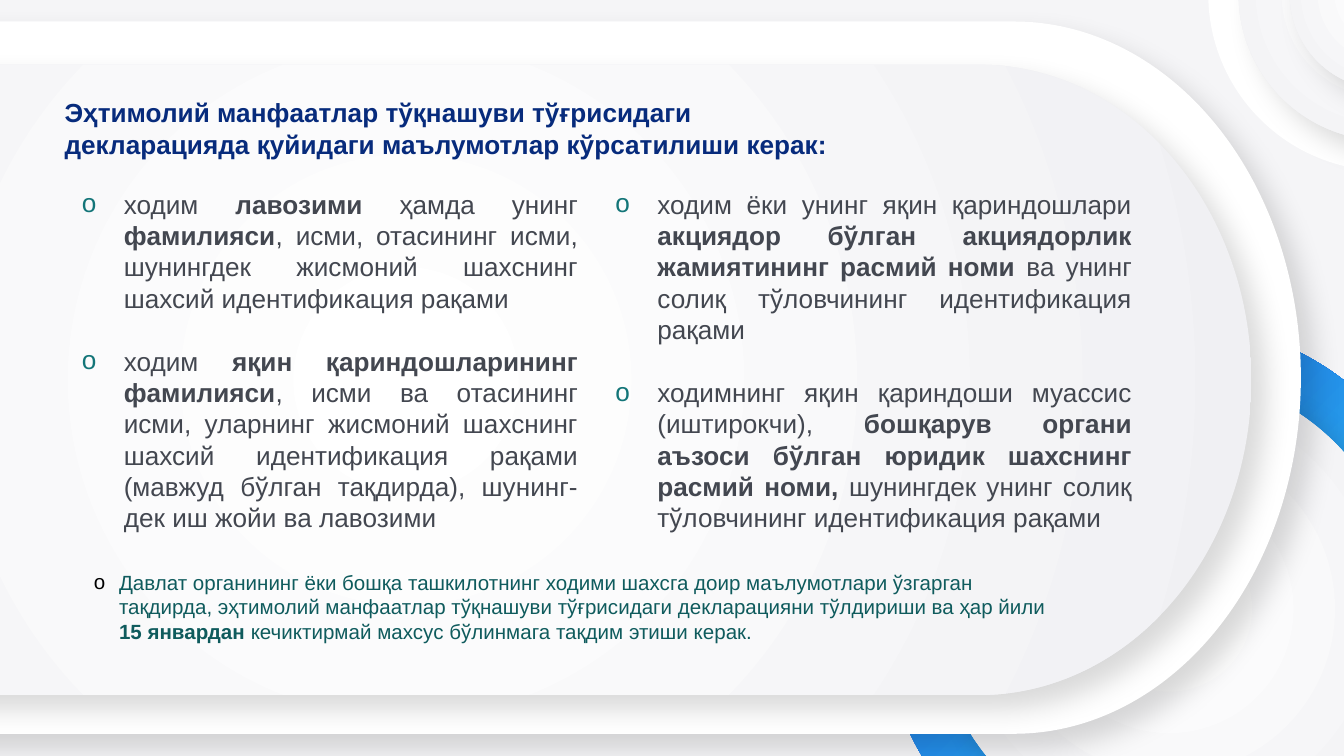
import pptx
import pptx.util
import pptx.oxml
import pptx.oxml.ns
import pptx.dml.color
import pptx.enum.shapes
import pptx.enum.text

Pt = pptx.util.Pt
KIND = pptx.enum.shapes.MSO_SHAPE
ALIGN = pptx.enum.text.PP_ALIGN
NS = 'xmlns:a="http://schemas.openxmlformats.org/drawingml/2006/main"'
GREY = ("FFFFFF", "F0F0F3")
BLUE = ("1658F1", "36DBE0")
BODY = {"size": Pt(14), "name": "Arial", "bold": False}
LINE = 16.8

LEFT = [
    [("ходим ", 0), ("лавозими ", 1), ("ҳамда унинг ", 0), ("фамилияси", 1),
     (", исми, отасининг исми, шунингдек жисмоний шахснинг шахсий идентификация рақами", 0)],
    [("ходим ", 0), ("яқин қариндошларининг фамилияси", 1),
     (", исми ва отасининг исми, уларнинг жисмоний шахснинг шахсий идентификация рақами "
      "(мавжуд бўлган тақдирда), шунинг-дек иш жойи ва лавозими", 0)],
]
RIGHT = [
    [("ходим ёки унинг яқин қариндошлари ", 0),
     ("акциядор бўлган акциядорлик жамиятининг расмий номи ", 1),
     ("ва унинг солиқ тўловчининг идентификация рақами", 0)],
    [("ходимнинг яқин қариндоши муассис (иштирокчи), ", 0),
     ("бошқарув органи аъзоси бўлган юридик шахснинг расмий номи, ", 1),
     ("шунингдек унинг солиқ тўловчининг идентификация рақами", 0)],
]
NOTE = [
    [("Давлат органининг ёки бошқа ташкилотнинг ходими шахсга доир маълумотлари ўзгарган "
      "тақдирда, эҳтимолий манфаатлар тўқнашуви тўғрисидаги декларацияни тўлдириши ва ҳар йили ", 0),
     ("15 январдан ", 1), ("кечиктирмай махсус бўлинмага тақдим этиши керак.", 0)],
]
TITLE = ("Эҳтимолий манфаатлар тўқнашуви тўғрисидаги "
         "декларацияда қуйидаги маълумотлар кўрсатилиши керак:")


def color(code):
    return pptx.dml.color.RGBColor.from_string(code)


def style(font, form, code):
    for key, val in form.items():
        setattr(font, key, val)
    font.color.rgb = color(code)


def blend(shape, ends, round_):
    """Fill with a two-stop gradient, round or at 45 degrees."""
    kind = ('<a:path path="circle"><a:fillToRect l="50000" t="50000" r="50000" b="50000"/></a:path>'
            if round_ else '<a:lin ang="2700000" scaled="0"/>')
    stops = "".join(f'<a:gs pos="{i * 100000}"><a:srgbClr val="{c}"/></a:gs>'
                    for i, c in enumerate(ends))
    node = pptx.oxml.parse_xml(
        f'<a:gradFill {NS} rotWithShape="1"><a:gsLst>{stops}</a:gsLst>{kind}</a:gradFill>')
    shape._element.spPr.find(pptx.oxml.ns.qn("a:prstGeom")).addnext(node)


def shade(shape):
    """Add a soft shadow to the lower right."""
    shape._element.spPr.append(pptx.oxml.parse_xml(
        f'<a:effectLst {NS}><a:outerShdw blurRad="{Pt(15)}" dist="{Pt(11.2)}" dir="2700000" '
        'algn="tl" rotWithShape="0"><a:srgbClr val="000000"><a:alpha val="15000"/></a:srgbClr>'
        '</a:outerShdw></a:effectLst>'))


def form(slide, kind, box, ends=None, round_=True, shadow=True):
    shape = slide.shapes.add_shape(kind, *map(Pt, box))
    shape.line.fill.background()
    if ends:
        blend(shape, ends, round_)
    else:
        shape.fill.solid()
        shape.fill.fore_color.rgb = color("FFFFFF")
    if shadow:
        shade(shape)
    else:
        shape.shadow.inherit = False
    return shape


def disc(slide, mid, size, **opts):
    x, y = mid
    form(slide, KIND.OVAL, (x - size / 2, y - size / 2, size, size), **opts)


def pill(slide, box, ends=None):
    form(slide, KIND.FLOWCHART_TERMINATOR, box, ends).rotation = 180


def bullet(para, dent, code):
    props = para._p.get_or_add_pPr()
    props.set("marL", str(Pt(dent)))
    props.set("indent", str(-Pt(dent)))
    for tag in (f'<a:buClr {NS}><a:srgbClr val="{code}"/></a:buClr>',
                f'<a:buFont {NS} typeface="Arial"/>', f'<a:buChar {NS} char="o"/>'):
        props.append(pptx.oxml.parse_xml(tag))


def items(slide, box, paras, look, code, dent, mark, align):
    frame = slide.shapes.add_textbox(*map(Pt, box)).text_frame
    frame.word_wrap = True
    for i, runs in enumerate(paras):
        para = frame.add_paragraph() if i else frame.paragraphs[0]
        para.alignment = align
        if i:
            para.space_before = Pt(LINE)
        bullet(para, dent, mark)
        for text, bold in runs:
            run = para.add_run()
            run.text = text
            style(run.font, {**look, "bold": bool(bold)}, code)


def head(slide):
    title = slide.shapes.title
    place = {"left": Pt(27.4), "top": Pt(48.2), "width": Pt(452.9), "height": Pt(41)}
    for key, val in place.items():
        setattr(title, key, val)
    frame = title.text_frame
    frame.text = TITLE
    layout = {"word_wrap": True, "vertical_anchor": pptx.enum.text.MSO_ANCHOR.TOP,
              "auto_size": pptx.enum.text.MSO_AUTO_SIZE.NONE}
    for key, val in layout.items():
        setattr(frame, key, val)
    para = frame.paragraphs[0]
    para.alignment = ALIGN.LEFT
    style(para.runs[0].font, {**BODY, "bold": True}, "072B7C")
    # Bring the title in front of the panel
    slide.shapes._spTree.append(title._element)


def main():
    deck = pptx.Presentation()
    deck.slide_width, deck.slide_height = Pt(720), Pt(405)
    slide = deck.slides.add_slide(deck.slide_layouts[5])

    # Pale backdrop
    back = slide.background.fill
    back.solid()
    back.fore_color.rgb = color("EBECF0")
    tint = slide.background._cSld.find(".//" + pptx.oxml.ns.qn("a:srgbClr"))
    tint.append(pptx.oxml.parse_xml(f'<a:alpha {NS} val="48000"/>'))

    # Corner discs, each a white base with two raised rings
    for mid, sizes in (((691.6, 412.9), (146, 121, 79)), ((742, -3.2), (189.4, 157, 102.2))):
        disc(slide, mid, sizes[0], shadow=False)
        for size in sizes[1:]:
            disc(slide, mid, size, ends=GREY)

    # Blue ring
    hub = (626.4, 326.2)
    disc(slide, hub, 308.2, ends=BLUE, round_=False, shadow=False)
    disc(slide, hub, 251.3, ends=GREY)

    # Rounded panel
    pill(slide, (-258.5, 11.5, 955.4, 381.6))
    pill(slide, (-235.4, 34.6, 905.8, 337.7), GREY)

    # Heading, two columns and closing note
    head(slide)
    for left, width, paras in ((36.7, 280.1, LEFT), (322.6, 290.9, RIGHT)):
        items(slide, (left, 97.2, width, 200), paras, BODY, "434750", 22.5, "137578", ALIGN.JUSTIFY)
    items(slide, (43.2, 301.7, 530.6, 47.5), NOTE, {**BODY, "size": Pt(11)},
          "0F5B5D", 13.5, "000000", ALIGN.LEFT)
    deck.save("out.pptx")


if __name__ == "__main__":
    main()
